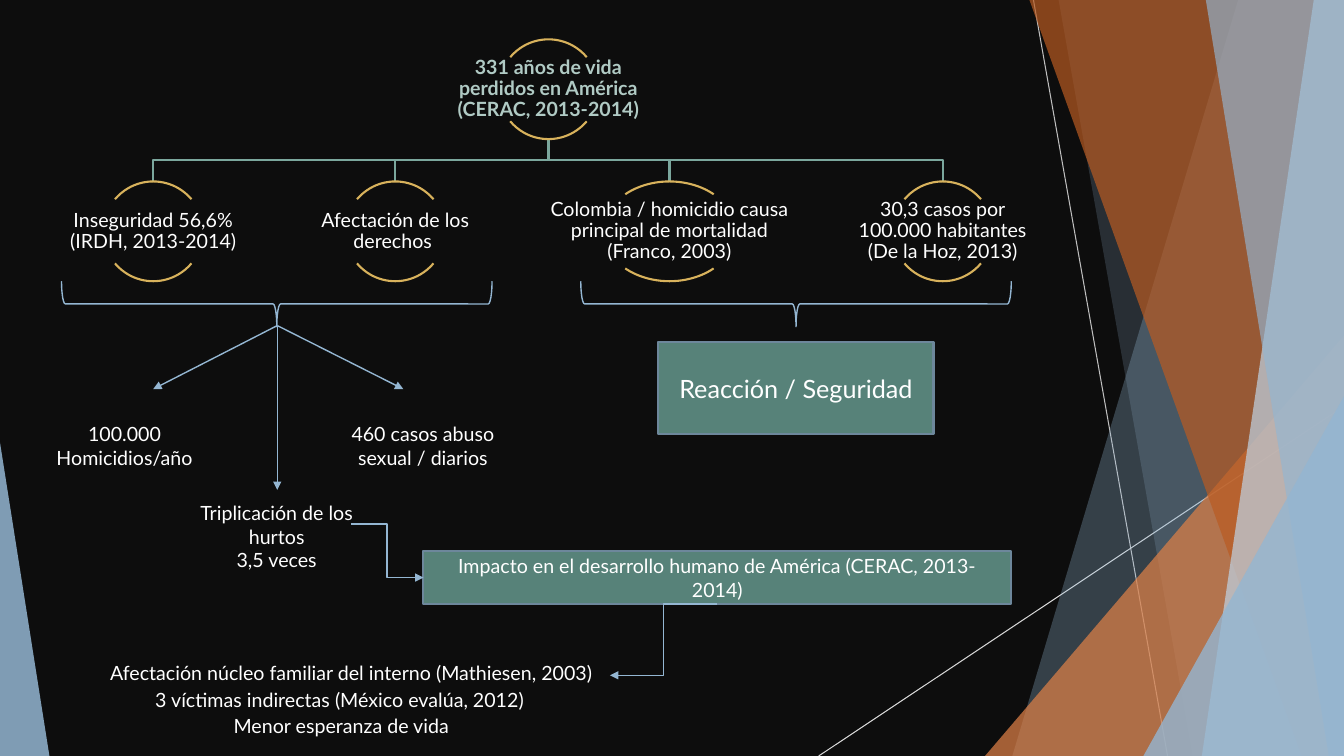
from dataclasses import dataclass

from lxml import etree
from pptx import Presentation
from pptx.dml.color import RGBColor
from pptx.enum import shapes, text
from pptx.oxml.ns import qn
from pptx.util import Inches, Pt

BLUE, GOLD, GREEN, WHITE = "94B6D2", "D8B25C", "7BA79D", "FFFFFF"
BOX_FILL, BOX_LINE = "578279", "6D879B"
W, H = 13.33, 7.5
NODE_H, ROOT_TOP, ROW_TOP = 0.99, 0.39, 1.8
Point = tuple[float, float]


@dataclass
class Facet:
    color: str
    opacity: int
    points: list[Point]


@dataclass
class Node:
    label: str
    center: float
    top: float = ROW_TOP
    arc_w: float = NODE_H
    color: str = WHITE
    bold: bool = False


@dataclass
class Label:
    lines: list[str]
    box: tuple[float, float, float, float]
    wrap: bool = True


FACETS = [
    Facet(BLUE, 30, [(12.28, 0), (W, 0), (W, H), (10.04, H)]),
    Facet(BLUE, 20, [(10.5, 0), (W, 0), (W, H), (11.83, H)]),
    Facet("DD8047", 72, [(W, 3.33), (W, H), (9.77, H)]),
    Facet("B95B22", 70, [(10.21, 0), (W, 0), (W, H), (12.91, H)]),
    Facet("BFD3E4", 70, [(13.03, 0), (W, 0), (W, H), (11.92, H)]),
    Facet(BLUE, 65, [(11.96, 0), (W, 0), (W, H), (13.18, H)]),
    Facet(BLUE, 80, [(W, 3.93), (W, H), (11.34, H)]),
    Facet(BLUE, 85, [(0, 4.39), (0.49, H), (0, H)]),
]
ROOT = Node("331 años de vida perdidos en América (CERAC, 2013-2014)",
            5.44, ROOT_TOP, color="B0CAC4", bold=True)
CAUSES = [
    Node("Inseguridad 56,6% (IRDH, 2013-2014)", 1.52),
    Node("Afectación de los derechos ", 3.92),
    Node("Colombia / homicidio causa principal de mortalidad (Franco, 2003)",
         6.64, arc_w=1.31),
    Node("30,3 casos por 100.000 habitantes (De la Hoz, 2013)", 9.35),
]
LABELS = [
    Label(["100.000 Homicidios/año"], (0.34, 4.14, 1.79, 0.57)),
    Label(["Triplicación de los hurtos", "3,5 veces"], (1.86, 4.92, 1.77, 0.81)),
    Label(["460 casos abuso sexual / diarios"], (3.35, 4.14, 1.69, 0.57)),
    Label(["Afectación núcleo familiar del interno (Mathiesen, 2003)"],
          (0.89, 6.51, 5.19, 0.34), False),
    Label(["3 víctimas indirectas (México evalúa, 2012)"],
          (1.37, 6.78, 4, 0.34), False),
    Label(["Menor esperanza de vida"], (2.16, 7.03, 2.45, 0.34), False),
]


def set_fill(fill, color: str, opacity: int = 100) -> None:
    fill.solid()
    fill.fore_color.rgb = RGBColor.from_string(color)
    if opacity < 100:
        clr = fill._xPr.find(".//" + qn("a:srgbClr"))
        etree.SubElement(clr, qn("a:alpha"), val=str(opacity * 1000))


def set_line(line, color: str, width: float) -> None:
    set_fill(line.fill, color)
    line.width = Pt(width)


def write(tf, lines: list[str], size: float = 14, color: str = WHITE,
          bold: bool = False, spacing: float | None = None) -> None:
    for i, line in enumerate(lines):
        p = tf.add_paragraph() if i else tf.paragraphs[0]
        p.alignment = text.PP_ALIGN.CENTER
        p.line_spacing = spacing
        r = p.add_run()
        r.text = line
        r.font.name, r.font.size, r.font.bold = "Lato", Pt(size), bold
        r.font.color.rgb = RGBColor.from_string(color)


def add_outline(s, points: list[Point], close: bool):
    pts = [(Inches(x), Inches(y)) for x, y in points]
    builder = s.shapes.build_freeform(*pts[0])
    builder.add_line_segments(pts[1:], close=close)
    sp = builder.convert_to_shape()
    sp.shadow.inherit = False
    return sp


def add_preset(s, kind, x: float, y: float, w: float, h: float,
               color: str, width: float):
    sp = s.shapes.add_shape(kind, Inches(x), Inches(y), Inches(w), Inches(h))
    sp.shadow.inherit = False
    sp.fill.background()
    set_line(sp.line, color, width)
    return sp


def add_node(s, node: Node) -> None:
    for start, end in ((132, 192), (24, 84)):
        arc = add_preset(s, shapes.MSO_SHAPE.ARC, node.center - node.arc_w / 2,
                         node.top, node.arc_w, NODE_H, GOLD, 1.5)
        arc.adjustments[0], arc.adjustments[1] = start, end
    sp = s.shapes.add_textbox(Inches(node.center - node.arc_w), Inches(node.top + 0.18),
                              Inches(2 * node.arc_w), Inches(0.63))
    tf = sp.text_frame
    tf.word_wrap = True
    tf.vertical_anchor = text.MSO_ANCHOR.MIDDLE
    tf.margin_left = tf.margin_right = tf.margin_top = tf.margin_bottom = Inches(0.01)
    write(tf, [node.label], color=node.color, bold=node.bold, spacing=0.9)


def add_box(s, label: str, x: float, y: float, w: float, h: float, size: float):
    sp = add_preset(s, shapes.MSO_SHAPE.RECTANGLE, x, y, w, h, BOX_LINE, 1.5)
    set_fill(sp.fill, BOX_FILL)
    sp.text_frame.vertical_anchor = text.MSO_ANCHOR.MIDDLE
    write(sp.text_frame, [label], size)
    return sp


def add_label(s, label: Label) -> None:
    sp = s.shapes.add_textbox(*map(Inches, label.box))
    tf = sp.text_frame
    tf.word_wrap = label.wrap
    tf.auto_size = text.MSO_AUTO_SIZE.SHAPE_TO_FIT_TEXT
    write(tf, label.lines)


def add_link(s, start: Point, end: Point, color: str = BLUE, width: float = 1,
             kind=shapes.MSO_CONNECTOR.STRAIGHT, arrow: bool = True):
    link = s.shapes.add_connector(kind, *map(Inches, start + end))
    set_line(link.line, color, width)
    if arrow:
        etree.SubElement(link.line._get_or_add_ln(), qn("a:tailEnd"), type="triangle")
    etree.SubElement(link._element.spPr, qn("a:effectLst"))
    return link


def main() -> None:
    prs = Presentation()
    prs.slide_width, prs.slide_height = Inches(W), Inches(H)
    s = prs.slides.add_slide(prs.slide_layouts[6])
    set_fill(s.background.fill, "0D0D0D")

    # Faceted side decoration
    add_link(s, (10.25, 0), (11.58, H), "BFBFBF", 0.75, arrow=False)
    add_link(s, (W, 4.03), (8.12, H), "D9D9D9", 0.75, arrow=False)
    for facet in FACETS:
        sp = add_outline(s, facet.points, close=True)
        set_fill(sp.fill, facet.color, facet.opacity)
        sp.line.fill.background()

    # Hierarchy: branches, then nodes
    root_bottom = ROOT_TOP + NODE_H
    bend = (root_bottom + ROW_TOP) / 2
    for cause in reversed(CAUSES):
        branch = add_outline(s, [(ROOT.center, root_bottom), (ROOT.center, bend),
                                 (cause.center, bend), (cause.center, ROW_TOP)], close=False)
        branch.fill.background()
        set_line(branch.line, GREEN, 1.5)
    for node in [ROOT, *CAUSES]:
        add_node(s, node)

    # Braces under each pair of causes
    for x in (7.67, 2.52):
        brace = add_preset(s, shapes.MSO_SHAPE.RIGHT_BRACE, x, 0.88, 0.45, 4.27, BLUE, 1)
        brace.rotation = 90

    # Boxes, effects and arrows
    add_box(s, "Reacción / Seguridad", 6.53, 3.39, 2.73, 0.92, 18)
    impact = add_box(s, "Impacto en el desarrollo humano de América (CERAC, 2013-2014)",
                     4.2, 5.47, 5.83, 0.52, 14)
    for label in LABELS:
        add_label(s, label)
    for tip in ((1.52, 3.86), (2.75, 4.86), (4.0, 3.86)):
        add_link(s, (2.75, 3.23), tip)
    elbow = shapes.MSO_CONNECTOR.ELBOW
    add_link(s, (3.48, 5.2), (4.2, 5.73), kind=elbow).end_connect(impact, 1)
    add_link(s, (7.11, 5.99), (6.05, 6.7), kind=elbow).begin_connect(impact, 2)

    prs.save("out.pptx")


if __name__ == "__main__":
    main()
